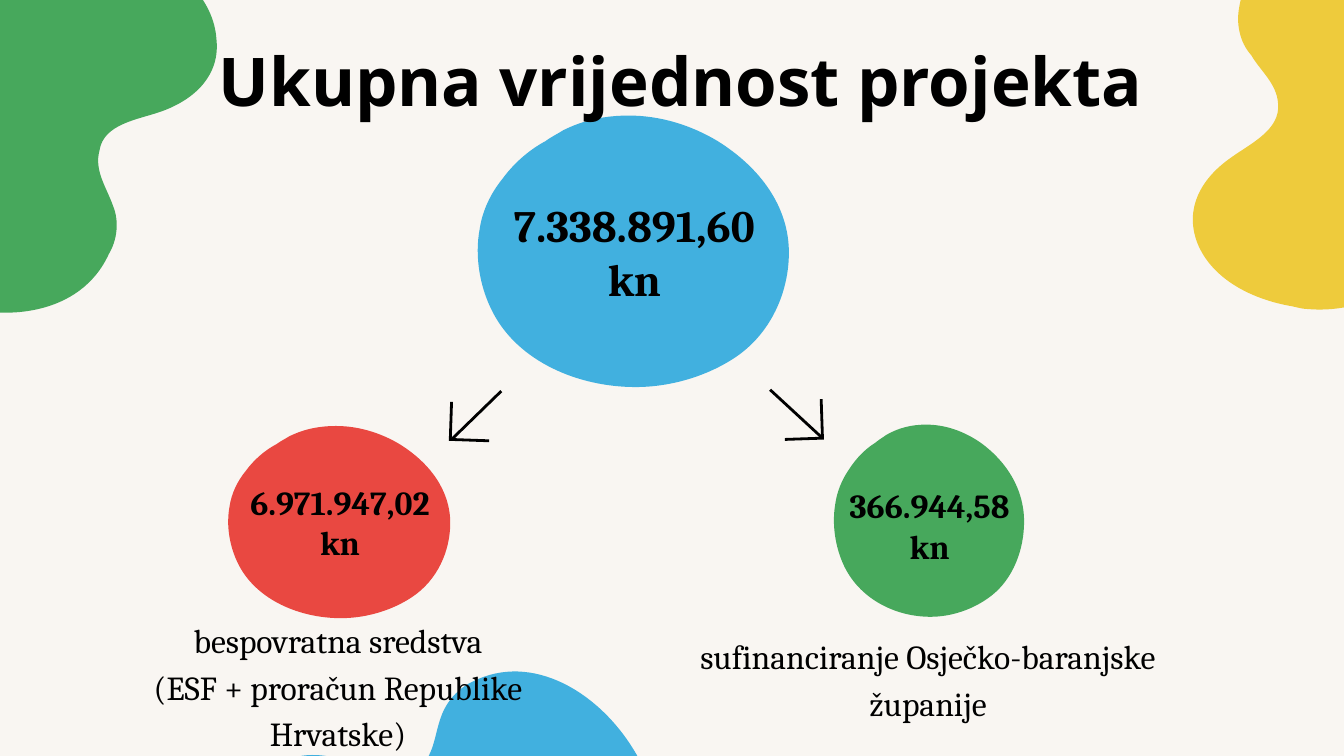
from lxml.etree import SubElement
from pptx import Presentation
from pptx.dml.color import RGBColor
from pptx.enum.shapes import MSO_CONNECTOR
from pptx.enum.text import MSO_ANCHOR, PP_ALIGN
from pptx.oxml.ns import qn
from pptx.util import Emu, Pt

PX = 9144  # 100 px to the inch
COLORS = {"paper": "F9F6F2", "yellow": "EECB3C", "green": "47A85C",
          "blue": "41B0DF", "red": "E94841", "black": "000000"}

prs = Presentation()
prs.slide_width = Emu(1000 * PX)
prs.slide_height = Emu(1000 * PX * 9 // 16)
s = prs.slides.add_slide(prs.slide_layouts[6])
s.background.fill.solid()
s.background.fill.fore_color.rgb = RGBColor.from_string(COLORS["paper"])


def add_blob(points, color, x=0, y=0, sx=1, sy=1):
    """Draw a closed chain of cubic curves: a start, then three points per curve."""
    pts = [(round((x + a * sx) * PX), round((y + b * sy) * PX)) for a, b in points]
    builder = s.shapes.build_freeform(*pts[0], scale=1.0)
    builder.add_line_segments(pts[3::3], close=True)
    sp = builder.convert_to_shape()
    # Bend each straight segment by putting its two control points first
    for i, segment in enumerate(list(sp._element.iter(qn("a:lnTo")))):
        segment.tag = qn("a:cubicBezTo")
        end = segment[0]
        for cx, cy in pts[3 * i + 1:3 * i + 3]:
            control = SubElement(segment, qn("a:pt"))
            control.set("x", str(cx - sp.left))
            control.set("y", str(cy - sp.top))
        segment.append(end)
    sp.shadow.inherit = False
    sp.fill.solid()
    sp.fill.fore_color.rgb = RGBColor.from_string(COLORS[color])
    sp.line.fill.background()
    return sp


def set_text(sp, lines, size, font="Cambria", bold=False, spacing=None,
             anchor=MSO_ANCHOR.TOP):
    tf = sp.text_frame
    tf.word_wrap = True
    tf.vertical_anchor = anchor
    tf.margin_left = tf.margin_right = tf.margin_top = tf.margin_bottom = Emu(10 * PX)
    tf.text = "\n".join(lines)
    for p in tf.paragraphs:
        p.alignment = PP_ALIGN.CENTER
        p.line_spacing = spacing
        p.font.name, p.font.size, p.font.bold = font, Pt(size), bold
        p.font.color.rgb = RGBColor.from_string(COLORS["black"])


# Corner blobs
corners = [
    ("yellow", [
        (974, 230), (998, 232), (1020, 225), (1040, 215),
        (1102, 208), (1135, 144), (1145, 92), (1156, 33), (1130, -28), (1069, -54),
        (1057, -58), (1045, -61), (1032, -62), (983, -65), (930, -43), (922, 6),
        (920, 17), (922, 31), (931, 41), (938, 53), (950, 62), (951, 77),
        (953, 97), (930, 107), (915, 118), (894, 133), (881, 155), (891, 181),
        (902, 208), (932, 223), (962, 228), (966, 229), (970, 230), (974, 230)]),
    ("green", [
        (95, -43), (72, -51), (49, -51), (26, -47),
        (-36, -58), (-86, -5), (-111, 43), (-138, 97), (-130, 163), (-78, 206),
        (-68, 213), (-56, 220), (-44, 224), (2, 241), (60, 235), (81, 189),
        (87, 179), (89, 165), (84, 153), (79, 139), (70, 127), (74, 112),
        (77, 92), (103, 89), (120, 83), (145, 74), (164, 56), (161, 29),
        (159, -1), (133, -24), (106, -38), (102, -40), (98, -41), (95, -43)]),
    ("blue", [
        (200, 680), (213, 700), (231, 714), (250, 725),
        (293, 771), (363, 761), (412, 739), (466, 714), (501, 657), (486, 592),
        (483, 580), (478, 568), (471, 557), (445, 515), (396, 485), (352, 507),
        (341, 512), (332, 522), (328, 534), (323, 548), (323, 563), (311, 572),
        (296, 585), (274, 572), (257, 566), (233, 558), (207, 560), (192, 584),
        (176, 608), (181, 642), (194, 669), (196, 673), (198, 676), (200, 680)]),
]
for color, points in corners:
    add_blob(points, color)

# Amount circles: one outline, 234 by 202, stretched to each box
circle = [
    (115, 0), (98, 0), (82, 3), (66, 11), (63, 13), (57, 16), (53, 19),
    (40, 26), (29, 36), (21, 47), (12, 58), (6, 71), (4, 84),
    (0, 105), (4, 128), (14, 147), (33, 183), (77, 202), (120, 202),
    (146, 202), (173, 194), (194, 180), (221, 162), (234, 131), (234, 102),
    (234, 68), (213, 39), (181, 19), (161, 7), (138, 0), (115, 0)]
amounts = [
    ("blue", 353, 86, 234, 202, ["7.338.891,60 kn"], 24, 10),
    ("red", 168, 317, 167, 143, ["6.971.947,02", "kn"], 18, 10),
    ("green", 619, 316, 143, 143, ["366.944,58 kn"], 18, 17),
]
for color, x, y, w, h, lines, size, top in amounts:
    sp = add_blob(circle, color, x, y, w / 234, h / 202)
    set_text(sp, lines, size, bold=True, anchor=MSO_ANCHOR.MIDDLE)
    sp.text_frame.margin_top = Emu(top * PX)

# Title and captions
texts = [
    (85, 10, 843, 88, ["Ukupna vrijednost projekta"], 36, "Open Sans", True),
    (72, 447, 359, 143,
     ["bespovratna sredstva", "(ESF + proračun Republike Hrvatske)"], 18, "Cambria", False),
    (511, 459, 359, 93,
     ["sufinanciranje Osječko-baranjske županije"], 18, "Cambria", False),
]
for x, y, w, h, lines, size, font, bold in texts:
    sp = s.shapes.add_textbox(*[Emu(v * PX) for v in (x, y, w, h)])
    set_text(sp, lines, size, font, bold, spacing=1.15)

# Arrows: two barbs and a shaft each
arrows = [
    [(364, 328, 335, 327), (336, 299, 335, 328), (373, 291, 336, 327)],
    [(611, 297, 612, 326), (584, 327, 613, 326), (573, 290, 612, 326)],
]
for strokes in arrows:
    group = s.shapes.add_group_shape()
    for ends in strokes:
        line = group.shapes.add_connector(MSO_CONNECTOR.STRAIGHT,
                                          *[Emu(v * PX) for v in ends])
        line.line.color.rgb = RGBColor.from_string(COLORS["black"])
        line.line.width = Pt(1.5)
        SubElement(line._element.spPr, qn("a:effectLst"))

prs.save("out.pptx")
